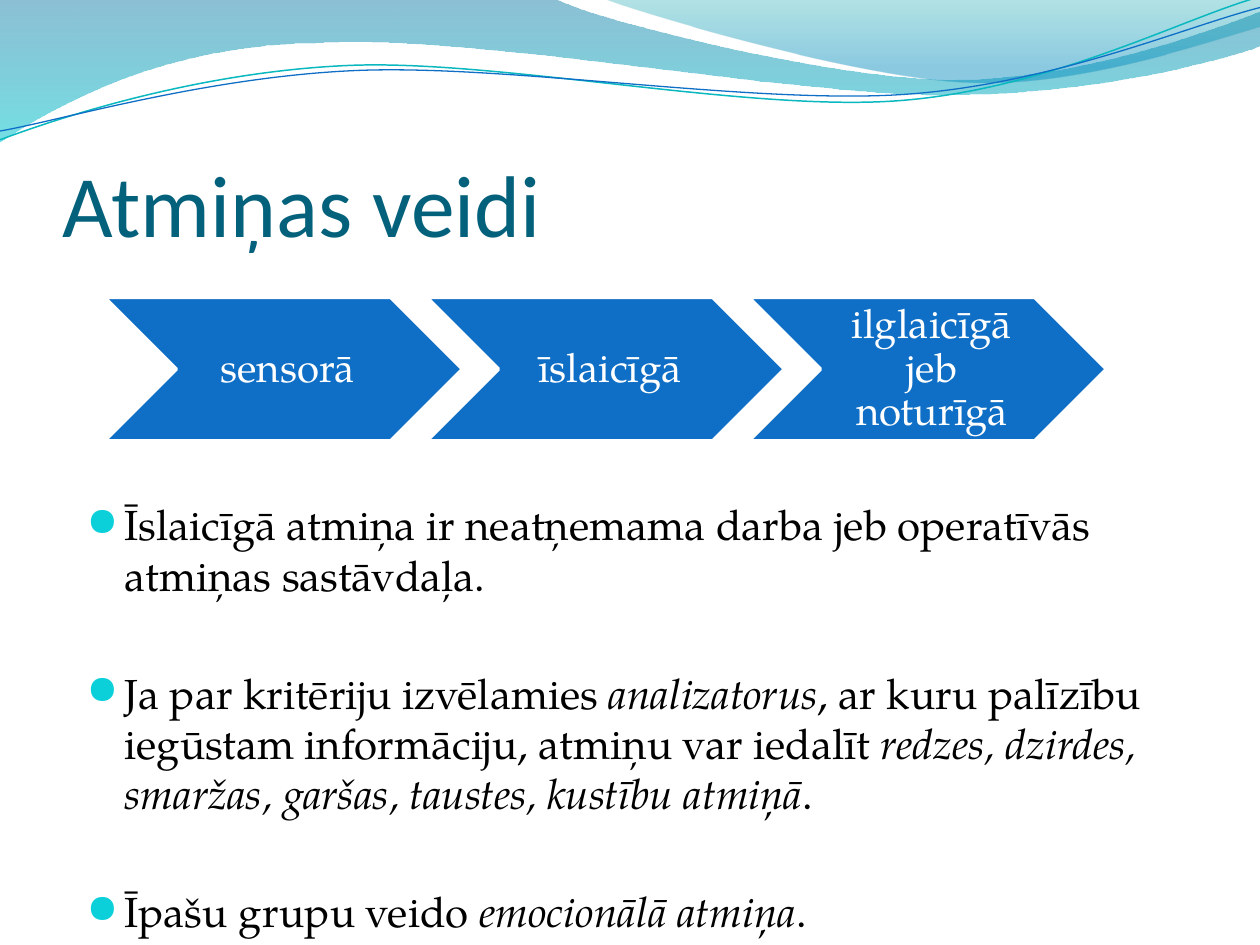
"""Build the slide on kinds of memory with a wave header, chevrons and bullets."""
from lxml.etree import SubElement
from pptx import Presentation
from pptx.dml.color import RGBColor
from pptx.enum.shapes import MSO_SHAPE
from pptx.enum.text import MSO_ANCHOR, PP_ALIGN
from pptx.oxml import parse_xml
from pptx.oxml.ns import nsdecls, qn
from pptx.util import Inches, Pt

BLUE = RGBColor(0x0F, 0x6F, 0xC6)
TEAL = RGBColor(0x0A, 0xB8, 0xBF)
TITLE = RGBColor(0x04, 0x61, 0x7B)
BLACK = RGBColor(0, 0, 0)
WHITE = RGBColor(0xFF, 0xFF, 0xFF)
WAVE_TOP = RGBColor(0x00, 0x74, 0xA1)
WAVE_END = RGBColor(0x00, 0xC6, 0xCF)
CREST_TOP = RGBColor(0x00, 0xA1, 0xA9)
CREST_END = RGBColor(0x00, 0x8B, 0xBF)
BODY_FONT = "TeX Gyre Pagella"


def add_path(s, start, segments, close):
    """Draw a path of lines (2 numbers) and cubic curves (6 numbers)."""
    fb = s.shapes.build_freeform(Inches(start[0]), Inches(start[1]))
    fb.add_line_segments([(Inches(seg[-2]), Inches(seg[-1])) for seg in segments], close=close)
    sp = fb.convert_to_shape()
    sp.shadow.inherit = False
    for node, seg in zip(list(sp._element.iter(qn("a:lnTo"))), segments):
        if len(seg) == 6:
            curve = SubElement(node.getparent(), qn("a:cubicBezTo"))
            for x, y in zip(seg[::2], seg[1::2]):
                SubElement(curve, qn("a:pt"), x=str(Inches(x) - sp.left),
                           y=str(Inches(y) - sp.top))
            node.getparent().replace(node, curve)
    return sp


prs = Presentation()
prs.slide_width, prs.slide_height = Inches(10), Inches(7.5)
s = prs.slides.add_slide(prs.slide_layouts[6])

waves = [
    ((0, -0.01),
     [(4.4, -0.01), (4.76, 0.17, 6.64, 0.63, 7.58, 0.63),
      (8.53, 0.63, 9.58, 0.26, 10, 0.09), (10.01, 0.36),
      (9.83, 0.44, 8.7, 0.76, 7.46, 0.75), (6.22, 0.75, 3.82, 0.28, 2.57, 0.34),
      (1.29, 0.35, 0.46, 0.83, -0.01, 1.13)],
     [(0, WAVE_TOP, 45), (1, WAVE_END, 55)]),
    ((4.79, -0.01),
     [(5.09, 0.11, 6.82, 0.62, 7.69, 0.65), (8.56, 0.69, 9.61, 0.32, 10, 0.21),
      (10, 0)],
     [(0, CREST_TOP, 30), (0.8, CREST_END, 45)]),
]
for start, segments, stops in waves:
    sp = add_path(s, start, segments, True)
    sp.line.fill.background()
    sp.fill.gradient()
    sp.fill.gradient_angle = 270
    for stop, (position, color, _) in zip(sp.fill.gradient_stops, stops):
        stop.position = position
        stop.color.rgb = color
    for clr, (_, _, opacity) in zip(sp._element.spPr.iter(qn("a:srgbClr")), stops):
        SubElement(clr, qn("a:alpha"), val=str(opacity * 1000))

lines = [
    ((0, 1.11),
     [(0.48, 0.93, 1.58, 0.57, 2.77, 0.52), (3.95, 0.47, 5.93, 0.89, 7.13, 0.8),
      (8.33, 0.71, 9.38, 0.15, 9.98, -0.02)], TEAL, 0.85),
    ((0, 1.04),
     [(0.47, 0.96, 1.64, 0.61, 2.83, 0.56), (4.03, 0.51, 5.97, 0.83, 7.17, 0.75),
      (8.36, 0.67, 9.41, 0.21, 10, 0.06)], BLUE, 0.75),
]
for start, segments, color, width in lines:
    sp = add_path(s, start, segments, False)
    sp.fill.background()
    sp.line.color.rgb = color
    sp.line.width = Pt(width)

tf = s.shapes.add_textbox(Inches(0.5), Inches(0.77), Inches(9), Inches(1.25)).text_frame
tf.word_wrap = True
tf.vertical_anchor = MSO_ANCHOR.BOTTOM
tf.margin_left = tf.margin_right = tf.margin_bottom = 0
p = tf.paragraphs[0]
p.text = "Atmiņas veidi"
p.font.name, p.font.size = "Calibri", Pt(50)
p.font.color.rgb = TITLE

tf = s.shapes.add_textbox(Inches(0.59), Inches(3.91), Inches(8.66), Inches(3.12)).text_frame
tf.word_wrap = True
bullets = [
    [("Īslaicīgā atmiņa ir neatņemama darba jeb operatīvās atmiņas sastāvdaļa.", False)],
    [("Ja par kritēriju izvēlamies ", False), ("analizatorus", True),
     (", ar kuru palīzību iegūstam informāciju, atmiņu var iedalīt ", False),
     ("redzes, dzirdes, smaržas, garšas, taustes, kustību atmiņā", True), (".", False)],
    [("Īpašu grupu veido ", False), ("emocionālā atmiņa", True), (".", False)],
]
for i, runs in enumerate(bullets):
    p = tf.add_paragraph() if i else tf.paragraphs[0]
    p.space_before = Pt(38.5 if i else 4.8)
    p.font.name, p.font.size = BODY_FONT, Pt(24)
    p.font.color.rgb = BLACK
    pPr = p._p.get_or_add_pPr()
    pPr.set("marL", str(Inches(0.3)))
    pPr.set("indent", str(-Inches(0.3)))
    for k, xml in enumerate((
            '<a:buClr %s><a:srgbClr val="0BD0D9"/></a:buClr>',
            '<a:buSzPct %s val="95000"/>',
            '<a:buFont %s typeface="OpenSymbol"/>',
            '<a:buChar %s char="●"/>')):
        pPr.insert(1 + k, parse_xml(xml % nsdecls("a")))
    for text, italic in runs:
        r = p.add_run()
        r.text = text
        if italic:
            r.font.italic = True

width = 2.84
for i, text in enumerate(["sensorā", "īslaicīgā", "ilglaicīgā jeb noturīgā"]):
    sp = s.shapes.add_shape(MSO_SHAPE.CHEVRON, Inches(0.83 + i * 0.9 * width),
                            Inches(2.36), Inches(width), Inches(1.14))
    sp.shadow.inherit = False
    sp.fill.solid()
    sp.fill.fore_color.rgb = BLUE
    sp.line.color.rgb = WHITE
    sp.line.width = Pt(2)
    tf = sp.text_frame
    tf.word_wrap = True
    tf.vertical_anchor = MSO_ANCHOR.MIDDLE
    tf.margin_left = Inches(0.1)
    tf.margin_right = tf.margin_top = tf.margin_bottom = Inches(0.03)
    p = tf.paragraphs[0]
    p.text = text
    p.alignment = PP_ALIGN.CENTER
    p.line_spacing = 0.9
    p.font.name, p.font.size = BODY_FONT, Pt(23)
    p.font.color.rgb = WHITE

prs.save("out.pptx")
